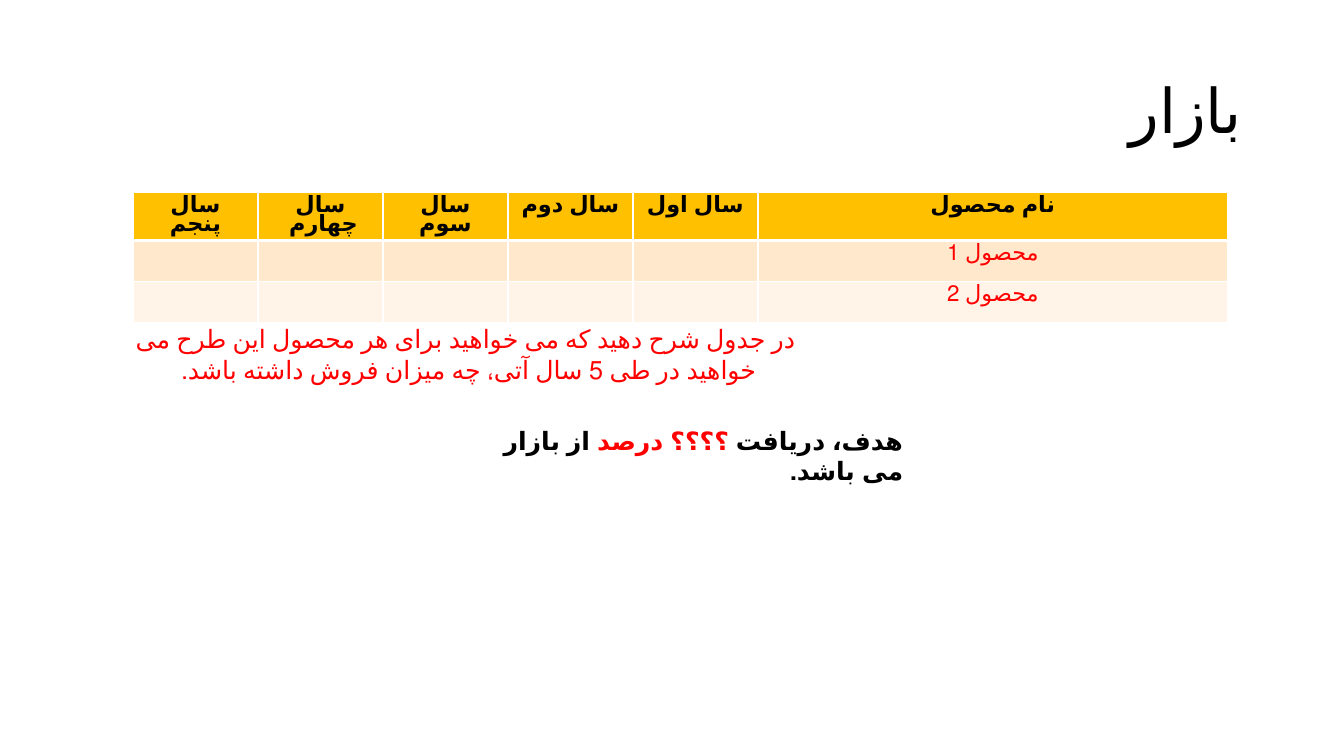
from dataclasses import dataclass

from lxml.etree import SubElement
from pptx import Presentation
from pptx.dml.color import RGBColor
from pptx.enum.text import MSO_ANCHOR, PP_ALIGN
from pptx.oxml.ns import qn
from pptx.util import Cm, Pt


@dataclass(frozen=True)
class Theme:
    head: str = "Calibri"
    body: str = "Times New Roman"
    lang: str = "fa-IR"
    black: str = "000000"
    red: str = "FF0000"
    white: str = "FFFFFF"
    gold: str = "FFC000"
    bands: tuple = ("FFE8CC", "FFF4E7")
    title: int = 44
    text: int = 18
    cell: int = 16


THEME = Theme()
YEARS = ["سال پنجم", "سال چهارم ", "سال سوم", "سال دوم", "سال اول"]
GOODS = ["محصول 1", "محصول 2"]


def write(frame, *parts, size=THEME.text, font=THEME.body, bold=False,
          align=PP_ALIGN.CENTER, space=1.0):
    """Fill a frame with one right-to-left paragraph of (text, colour) parts."""
    para = frame.paragraphs[0]
    para.alignment = align
    para.line_spacing = space
    para._p.get_or_add_pPr().set("rtl", "1")
    for text, color in parts:
        run = para.add_run()
        run.text = text
        run.font.name = font
        run.font.size = Pt(size)
        run.font.bold = bold
        run.font.color.rgb = RGBColor.from_string(color)
        run._r.get_or_add_rPr().set("lang", THEME.lang)


def rule(cell, base):
    """Draw white cell borders, with the bottom one of the given width."""
    props = cell._tc.get_or_add_tcPr()
    for side, width in (("L", 1), ("R", 1), ("T", 1), ("B", base)):
        line = SubElement(props, qn(f"a:ln{side}"), w=str(Pt(width)))
        fill = SubElement(line, qn("a:solidFill"))
        SubElement(fill, qn("a:srgbClr"), val=THEME.white)


def add_title(slide, box):
    title = slide.shapes.title
    title.left, title.top, title.width, title.height = box
    title.text_frame.vertical_anchor = MSO_ANCHOR.MIDDLE
    write(title.text_frame, ("بازار", THEME.black), size=THEME.title,
          font=THEME.head, align=PP_ALIGN.RIGHT, space=0.9)


def add_sales(slide, box):
    """Place the sales table: narrow year columns, then the product names."""
    rows = [YEARS + ["نام محصول"]]
    rows += [[""] * len(YEARS) + [name] for name in GOODS]
    table = slide.shapes.add_table(len(rows), len(rows[0]), *box).table
    year = Cm(3.15)
    for col in table.columns:
        col.width = year
    table.columns[len(YEARS)].width = box[2] - year * len(YEARS)
    for r, row in enumerate(rows):
        top = r == 0
        for c, text in enumerate(row):
            cell = table.cell(r, c)
            rule(cell, 3 if top else 1)
            cell.fill.solid()
            shade = THEME.gold if top else THEME.bands[r - 1]
            cell.fill.fore_color.rgb = RGBColor.from_string(shade)
            if text:
                write(cell.text_frame, (text, THEME.black if top else THEME.red),
                      size=THEME.cell, bold=top, space=0.85)


def add_text(slide, box, *parts, **style):
    frame = slide.shapes.add_textbox(*box).text_frame
    frame.word_wrap = True
    write(frame, *parts, **style)


def main():
    deck = Presentation()
    deck.slide_width, deck.slide_height = Cm(33.87), Cm(19.05)
    slide = deck.slides.add_slide(deck.slide_layouts[5])
    add_title(slide, (Cm(2.34), Cm(1.02), Cm(29.21), Cm(3.68)))
    add_sales(slide, (Cm(3.35), Cm(4.85), Cm(27.59), Cm(3.09)))
    add_text(slide, (Cm(12.04), Cm(10.59), Cm(10.97), Cm(1.02)),
             ("هدف، دریافت ", THEME.black), ("؟؟؟؟ درصد ", THEME.red),
             ("از بازار می باشد.", THEME.black),
             bold=True, align=PP_ALIGN.RIGHT)
    add_text(slide, (Cm(2.92), Cm(8.03), Cm(17.63), Cm(1.8)),
             ("در جدول شرح دهید که می خواهید برای هر محصول این طرح می خواهید "
              "در طی 5 سال آتی، چه میزان فروش داشته باشد. ", THEME.red))
    deck.save("out.pptx")


if __name__ == "__main__":
    main()
